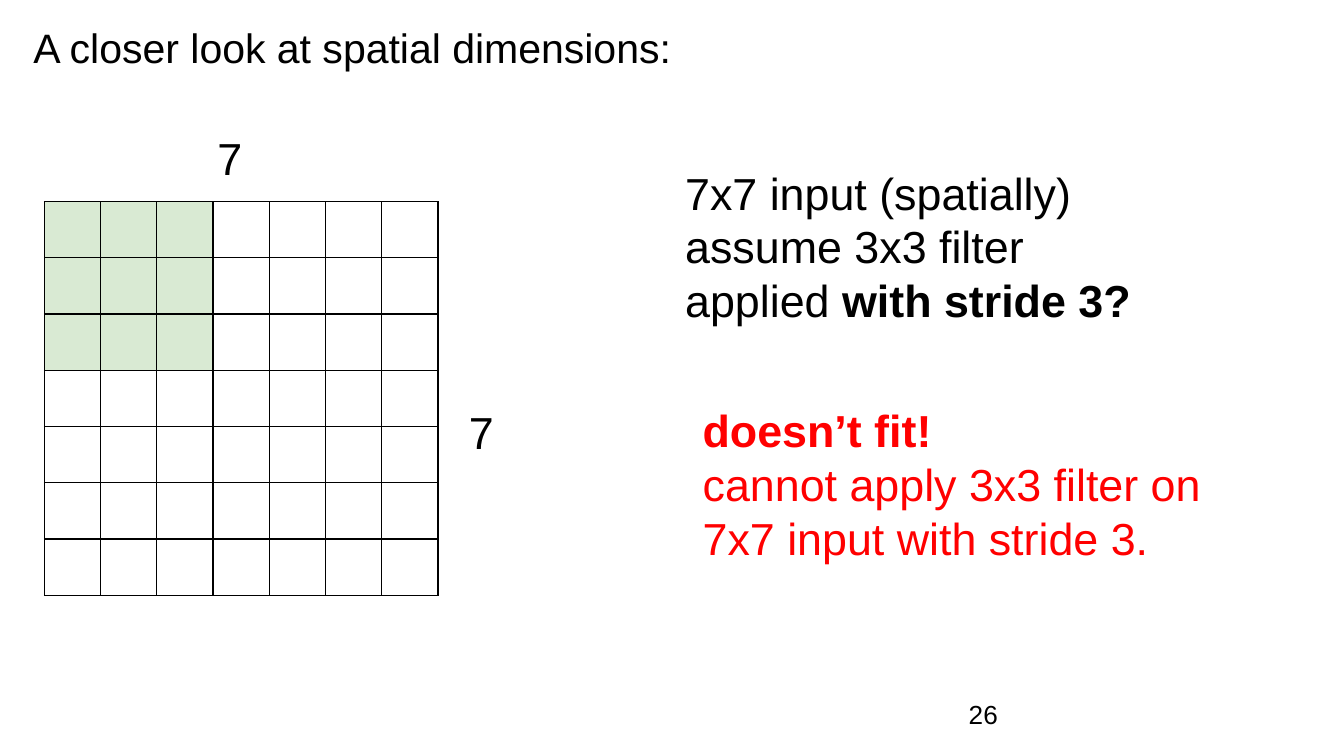
from dataclasses import dataclass

from lxml import etree
from pptx import Presentation
from pptx.dml.color import RGBColor
from pptx.enum.text import MSO_ANCHOR
from pptx.oxml.ns import qn
from pptx.util import Pt

TOP = MSO_ANCHOR.TOP
MIDDLE = MSO_ANCHOR.MIDDLE
PX = 9144
SIDES = ("a:lnL", "a:lnR", "a:lnT", "a:lnB")


@dataclass(frozen=True)
class Theme:
    """Colours, font and type sizes of the slide."""
    font: str = "Arial"
    ink: str = "000000"
    alert: str = "FF0000"
    filter_fill: str = "D9EAD3"
    paper: str = "FFFFFF"
    title: int = 22
    body: int = 24
    number: int = 14
    border: float = 0.75


THEME = Theme()


def px(value):
    """Turn px into EMU."""
    return value * PX


def add_text(page, box, paragraphs, size, color=THEME.ink, anchor=TOP):
    """Place paragraphs, each a list of (text, bold) runs, in a box."""
    frame = page.shapes.add_textbox(*map(px, box)).text_frame
    frame.word_wrap = True
    frame.vertical_anchor = anchor
    frame.margin_left = frame.margin_right = px(10)
    frame.margin_top = frame.margin_bottom = px(10)
    for index, runs in enumerate(paragraphs):
        para = frame.add_paragraph() if index else frame.paragraphs[0]
        for text, bold in runs:
            span = para.add_run()
            span.text = text
            span.font.name = THEME.font
            span.font.size = Pt(size)
            span.font.bold = bold
            span.font.color.rgb = RGBColor.from_string(color)


def set_borders(cell):
    """Draw a thin line on every side of a cell."""
    properties = cell._tc.get_or_add_tcPr()
    for position, side in enumerate(SIDES):
        line = etree.Element(qn(side), w=str(Pt(THEME.border)))
        fill = etree.SubElement(line, qn("a:solidFill"))
        etree.SubElement(fill, qn("a:srgbClr"), val=THEME.ink)
        properties.insert(position, line)


def add_input_grid(page, box, count, filter_count):
    """Draw the square input with the filter shaded in its top left corner."""
    grid = page.shapes.add_table(count, count, *map(px, box)).table
    grid.first_row = grid.horz_banding = False
    for row in range(count):
        for column in range(count):
            cell = grid.cell(row, column)
            cell.margin_top = cell.margin_bottom = 0
            covered = max(row, column) < filter_count
            cell.fill.solid()
            cell.fill.fore_color.rgb = RGBColor.from_string(
                THEME.filter_fill if covered else THEME.paper)
            set_borders(cell)


def add_input(page, left, top):
    """Place the input grid with its width and height labels."""
    label = [[("7", False)]]
    add_text(page, (left + 119, top - 63, 60, 50), label, THEME.body)
    add_text(page, (left + 306, top + 141, 64, 31), label, THEME.body)
    add_input_grid(page, (left, top, 293, 293), 7, 3)


def add_explanation(page, left, top):
    """Place the question and the answer beneath it."""
    question = [
        [("7x7 input (spatially)", False)],
        [("assume 3x3 filter", False)],
        [("applied ", False), ("with stride 3?", True)],
    ]
    answer = [
        [("doesn’t fit!", True)],
        [("cannot apply 3x3 filter on 7x7 input with stride 3.", False)],
    ]
    add_text(page, (left, top, 560, 201), question, THEME.body)
    add_text(page, (left + 13, top + 177, 434, 133), answer, THEME.body, THEME.alert)


def main():
    """Build the slide and save the deck."""
    deck = Presentation()
    deck.slide_width = px(1000)
    deck.slide_height = deck.slide_width * 9 // 16
    page = deck.slides.add_slide(deck.slide_layouts[6])
    title = [[("A closer look at spatial dimensions:", False)]]
    add_text(page, (15, 7, 916, 66), title, THEME.title)
    add_input(page, 33, 150)
    add_explanation(page, 500, 113)
    add_text(page, (711, 510, 60, 43), [[("26", False)]], THEME.number, anchor=MIDDLE)
    deck.save("out.pptx")


if __name__ == "__main__":
    main()
